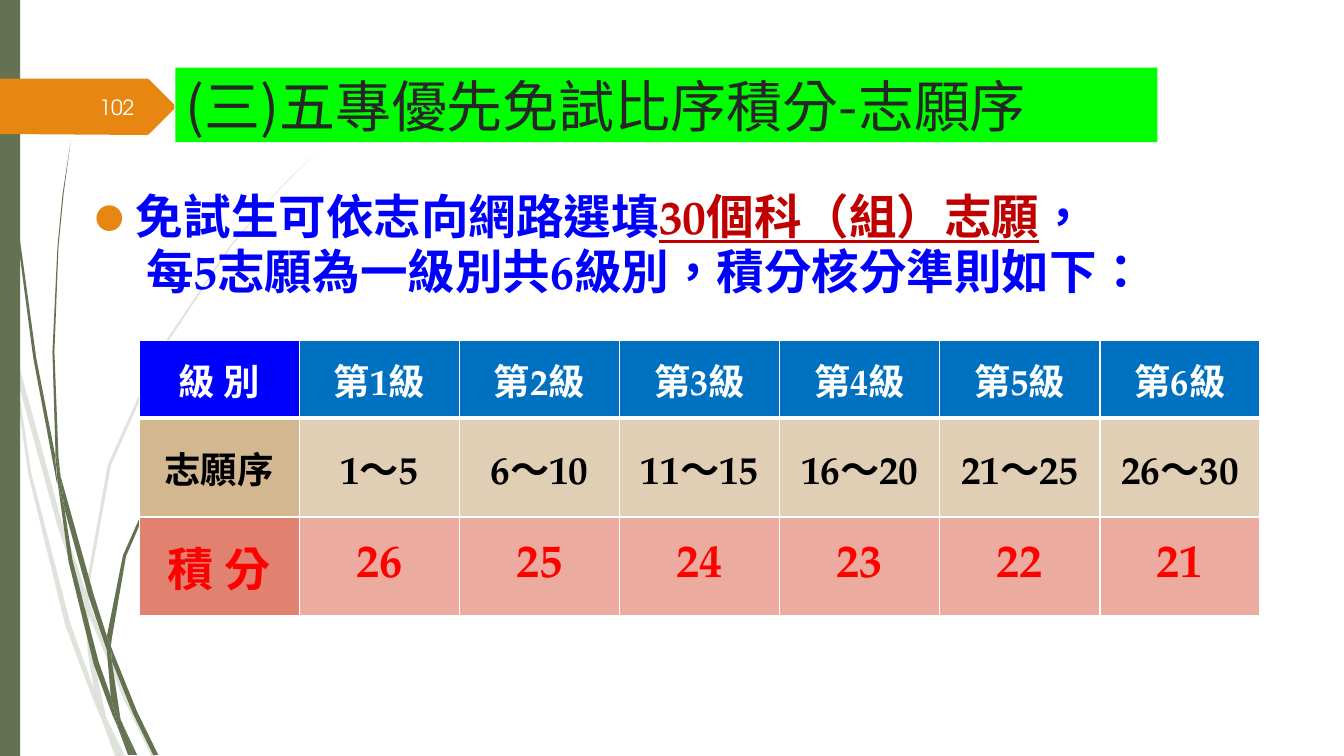
import dataclasses

import pptx
import pptx.dml.color
import pptx.enum.shapes
import pptx.enum.text
import pptx.oxml.ns
import pptx.oxml.xmlchemy
import pptx.util
from pptx.util import Inches

ANCHOR = pptx.enum.text.MSO_ANCHOR
ALIGN = pptx.enum.text.PP_ALIGN
RECTANGLE = pptx.enum.shapes.MSO_SHAPE.RECTANGLE


@dataclasses.dataclass(frozen=True)
class Theme:
    sans: str = "Noto Sans CJK SC"
    serif: str = "TeX Gyre Pagella"
    number_face: str = "TeX Gyre Adventor"
    olive: str = "647252"
    orange: str = "E78712"
    green: str = "00FF00"
    ink: str = "262626"
    blue: str = "0000FF"
    dark_red: str = "C00000"
    header: str = "0070C0"
    tan: str = "D2B790"
    light_tan: str = "E1CFB5"
    coral: str = "E1816F"
    light_coral: str = "EBAB9F"
    red: str = "FF0000"
    black: str = "000000"
    white: str = "FFFFFF"
    number_white: str = "FEFFFF"
    title_size: int = 40
    body_size: int = 34
    level_size: int = 26
    range_size: int = 28
    score_size: int = 33
    number_size: int = 15


THEME = Theme()

PALE_WISPS = [
    [(.11, 3.5), (.08, 3.22), (0, 2.82), (0, 2.99), (.1, 3.44)],
    [(.57, 5.22), (.84, 5.99), (.85, 5.86), (.62, 5.2), (.14, 3.45), (.17, 3.76)],
    [(.92, 6.07), (.88, 5.96), (.88, 6.1), (1.23, 6.94), (1.5, 7.5), (1.55, 7.5), (1.27, 6.92)],
    [(1.19, 7.5), (1.24, 7.5), (1.05, 7.11)],
    [(.93, 6.83), (.7, 6.19), (.31, 4.69), (.17, 3.76), (.11, 3.5), (.28, 4.7), (.65, 6.21),
     (.92, 6.93), (1.01, 7.14), (.99, 7.07)],
    [(.84, 5.99), (.87, 6.46), (.93, 6.83), (.96, 6.92), (1.05, 7.11), (1.04, 7.06), (.91, 6.46),
     (.88, 6.1), (.88, 6.08)],
    [(.88, 5.84), (1.1, 4.62), (1.6, 3.49), (2.29, 2.45), (2.68, 1.98), (2.9, 1.75), (3.12, 1.53),
     (2.89, 1.75), (2.68, 1.97), (2.28, 2.44), (1.58, 3.48), (1.07, 4.61), (.85, 5.84),
     (.85, 5.86), (.88, 5.96)],
    [(1.01, 7.14), (1.14, 7.5), (1.19, 7.5)],
    [(.88, 6.08), (.88, 6.1), (.88, 5.96), (.85, 5.86), (.84, 5.99)],
    [(.96, 6.92), (.93, 6.83), (.99, 7.07), (1.01, 7.14), (1.19, 7.5), (1.05, 7.11)],
]
OLIVE_WISPS = [
    [(.07, 1.1), (.17, 2.33), (.33, 3.55), (.56, 4.77), (.57, 4.81), (.55, 4.57), (.55, 4.53),
     (.36, 3.55), (.19, 2.32), (.08, 1.09), (.05, .48), (.03, 0), (.03, .48)],
    [(.88, 5.92), (1.06, 6.45), (1.06, 6.31), (.93, 5.9), (.6, 4.72), (.64, 5.05)],
    [(1.13, 6.49), (1.1, 6.41), (1.11, 6.56), (1.32, 7.08), (1.52, 7.49), (1.57, 7.49), (1.36, 7.06)],
    [(1.1, 6.91), (.98, 6.57), (.72, 5.56), (.64, 5.05), (.57, 4.77), (.68, 5.57), (.93, 6.59),
     (1.11, 7.08), (1.17, 7.22), (1.16, 7.17)],
    [(.6, 4.72), (.58, 4.53), (.54, 3.49), (.58, 2.45), (.63, 1.93), (.7, 1.41), (.62, 1.93),
     (.57, 2.45), (.52, 3.49), (.55, 4.49)],
    [(1.33, 7.49), (1.36, 7.49), (1.22, 7.19)],
    [(.57, 4.77), (.64, 5.05), (.6, 4.72), (.55, 4.49), (.55, 4.53)],
    [(1.11, 6.33), (1.25, 5.52), (1.58, 4.76), (2.05, 4.06), (2.31, 3.74), (2.46, 3.59), (2.61, 3.44),
     (2.45, 3.58), (2.31, 3.73), (2.04, 4.05), (1.56, 4.74), (1.22, 5.51), (1.06, 6.31), (1.1, 6.41)],
    [(1.17, 7.22), (1.27, 7.49), (1.31, 7.49)],
    [(1.06, 6.45), (1.1, 6.92), (1.16, 7.06), (1.22, 7.19), (1.2, 7.16), (1.11, 6.56), (1.09, 6.51)],
    [(1.06, 6.45), (1.09, 6.51), (1.11, 6.56), (1.1, 6.41), (1.06, 6.31)],
    [(1.16, 7.06), (1.1, 6.91), (1.16, 7.17), (1.17, 7.22), (1.31, 7.49), (1.33, 7.49), (1.22, 7.19)],
]
PAGE_TAG = [(0, .78), (1.46, .78), (1.48, .79), (1.73, 1.04), (1.73, 1.08), (1.48, 1.33),
            (1.46, 1.34), (0, 1.33)]


def rgb(color):
    return pptx.dml.color.RGBColor.from_string(color)


def add_element(parent, tag, **attributes):
    element = pptx.oxml.xmlchemy.OxmlElement(tag)
    for key, value in attributes.items():
        element.set(key, str(value))
    parent.append(element)
    return element


def write(paragraph, text, size, color, face=THEME.sans, bold=False, underline=None):
    run = paragraph.add_run()
    run.text = text
    run.font.size = pptx.util.Pt(size)
    run.font.color.rgb = rgb(color)
    run.font.bold = bold
    run.font.underline = underline
    run.font.name = face
    properties = run._r.get_or_add_rPr()
    properties.set("lang", "zh-TW")
    add_element(properties, "a:ea", typeface=THEME.sans)


def paint(shape, color, opacity=100):
    shape.shadow.inherit = False
    shape.fill.solid()
    shape.fill.fore_color.rgb = rgb(color)
    shape.line.fill.background()
    if opacity < 100:
        tint = shape._element.spPr.find(".//" + pptx.oxml.ns.qn("a:srgbClr"))
        add_element(tint, "a:alpha", val=opacity * 1000)


def add_outline(shapes, left, top, points, color, opacity=100):
    corners = [(Inches(left + x), Inches(top + y)) for x, y in points]
    builder = shapes.build_freeform(*corners[0])
    builder.add_line_segments(corners[1:])
    paint(builder.convert_to_shape(), color, opacity)


def add_text_box(slide, left, top, width, height, anchor=ANCHOR.TOP):
    frame = slide.shapes.add_textbox(Inches(left), Inches(top), Inches(width), Inches(height)).text_frame
    frame.word_wrap = True
    frame.vertical_anchor = anchor
    return frame


def add_decoration(slide, left, top, height):
    for wisps, opacity in ((PALE_WISPS, 20), (OLIVE_WISPS, 100)):
        wisp_group = slide.shapes.add_group_shape()
        for wisp in wisps:
            add_outline(wisp_group.shapes, left, top, wisp, THEME.olive, opacity)
    band = slide.shapes.add_shape(RECTANGLE, Inches(left), Inches(top), Inches(.2), Inches(height))
    paint(band, THEME.olive)
    add_outline(slide.shapes, left, top, PAGE_TAG, THEME.orange)


def add_rule_text(slide, left, top, width, height):
    frame = add_text_box(slide, left, top, width, height)
    choice = frame.paragraphs[0]
    grading = frame.add_paragraph()
    for paragraph, margin, indent in ((choice, .4, -.4), (grading, .5, 0)):
        properties = paragraph._p.get_or_add_pPr()
        properties.set("marL", str(Inches(margin)))
        properties.set("indent", str(Inches(indent)))
        paragraph.line_spacing = .96
    bullet = choice._p.get_or_add_pPr()
    add_element(add_element(bullet, "a:buClr"), "a:srgbClr", val=THEME.orange)
    add_element(bullet, "a:buSzPct", val=60000)
    add_element(bullet, "a:buFont", typeface=THEME.sans)
    add_element(bullet, "a:buChar", char="●")
    strong = dict(size=THEME.body_size, bold=True)
    write(choice, "免試生可依志向網路選填", color=THEME.blue, **strong)
    write(choice, "30個", color=THEME.dark_red, face=THEME.serif, underline=True, **strong)
    write(choice, "科（組）志願", color=THEME.dark_red, underline=True, **strong)
    write(choice, "，", color=THEME.blue, **strong)
    write(grading, "每5志願為一級別共6級別，積分核分準則如下：", color=THEME.blue, face=THEME.serif, **strong)


def fill_cell(cell, text, fill, top_border, bottom_border, **text_format):
    cell.fill.solid()
    cell.fill.fore_color.rgb = rgb(fill)
    cell.vertical_anchor = ANCHOR.MIDDLE
    cell.margin_left = cell.margin_right = Inches(.05)
    paragraph = cell.text_frame.paragraphs[0]
    paragraph.alignment = ALIGN.CENTER
    write(paragraph, text, bold=True, **text_format)
    properties = cell._tc.get_or_add_tcPr()
    sides = (("a:lnL", 1), ("a:lnR", 1), ("a:lnT", top_border), ("a:lnB", bottom_border))
    for position, (side, points) in enumerate(sides):
        border = add_element(properties, side, w=pptx.util.Pt(points))
        add_element(add_element(border, "a:solidFill"), "a:srgbClr", val=THEME.white)
        properties.insert(position, border)


def add_score_table(slide, left, top, width, row_heights):
    levels = range(1, 7)
    rows = [
        ("級 別", [f"第{level}級" for level in levels], THEME.blue, THEME.header,
         THEME.white, THEME.level_size, THEME.level_size),
        ("志願序", [f"{5 * level - 4}～{5 * level}" for level in levels], THEME.tan, THEME.light_tan,
         THEME.black, THEME.level_size, THEME.range_size),
        ("積 分", [str(27 - level) for level in levels], THEME.coral, THEME.light_coral,
         THEME.red, THEME.score_size, THEME.score_size),
    ]
    table = slide.shapes.add_table(len(rows), len(levels) + 1, Inches(left), Inches(top),
                                   Inches(width), Inches(sum(row_heights))).table
    for column in table.columns:
        column.width = Inches(width / len(table.columns))
    for index, (label, values, label_fill, fill, color, label_size, size) in enumerate(rows):
        table.rows[index].height = Inches(row_heights[index])
        borders = dict(top_border=3 if index == 1 else 1, bottom_border=3 if index == 0 else 1)
        fill_cell(table.cell(index, 0), label, label_fill, size=label_size, color=color, **borders)
        for position, value in enumerate(values, 1):
            fill_cell(table.cell(index, position), value, fill, size=size, color=color,
                      face=THEME.serif, **borders)


def add_title(slide, left, top, width, height):
    banner = slide.shapes.add_shape(RECTANGLE, Inches(left), Inches(top), Inches(width), Inches(height))
    paint(banner, THEME.green)
    banner.text_frame.word_wrap = True
    banner.text_frame.vertical_anchor = ANCHOR.MIDDLE
    heading = banner.text_frame.paragraphs[0]
    heading.alignment = ALIGN.LEFT
    write(heading, "(三)五專優先免試比序積分-志願序", THEME.title_size, THEME.ink)


def add_page_number(slide, left, top, width, height):
    number = add_text_box(slide, left, top, width, height, ANCHOR.MIDDLE).paragraphs[0]
    number.alignment = ALIGN.RIGHT
    write(number, "102", THEME.number_size, THEME.number_white, face=THEME.number_face)


def main():
    deck = pptx.Presentation()
    deck.slide_width, deck.slide_height = Inches(13.33), Inches(7.5)
    slide = deck.slides.add_slide(deck.slide_layouts[6])
    add_decoration(slide, 0, 0, 7.5)
    add_rule_text(slide, .85, 1.84, 12.18, 5.15)
    add_score_table(slide, 1.38, 3.38, 11.12, (.77, .98, .98))
    add_title(slide, 1.74, .67, 9.74, .74)
    add_page_number(slide, .58, .86, .85, .4)
    deck.save("out.pptx")


if __name__ == "__main__":
    main()
